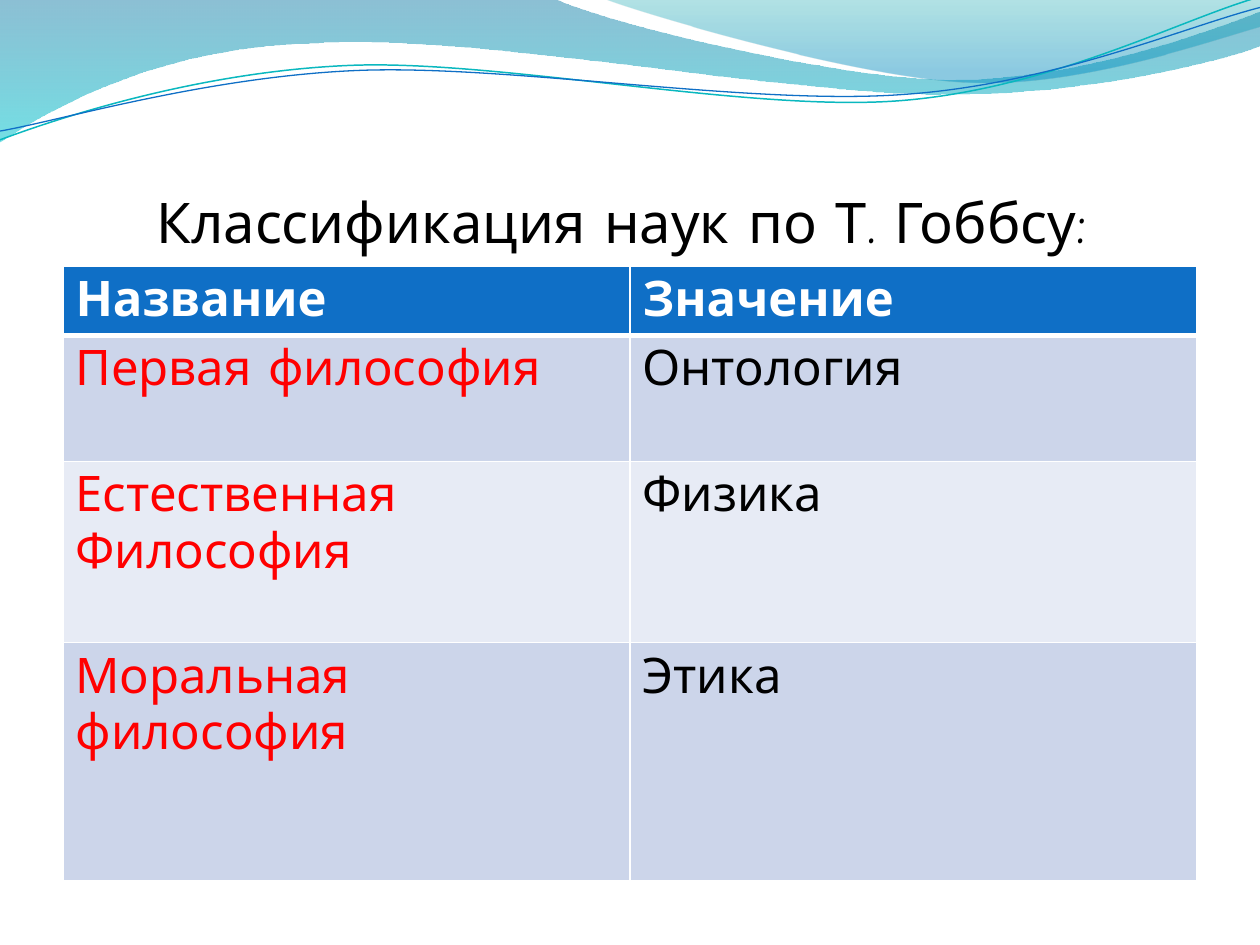
"""Build a slide with a wave header and a table of Hobbes's classification of sciences."""
import math
from lxml import etree
from pptx import Presentation
from pptx import util as u
from pptx.dml.color import RGBColor
from pptx.enum import text
from pptx.oxml import ns

COLORS = {
    "white": "FFFFFF", "black": "000000", "red": "FF0000", "header": "0F6FC6",
    "band_dark": "CCD5EA", "band_light": "E7EBF5", "teal_line": "0AB8BF",
    "deep_blue": "0074A1", "cyan": "00C6CF", "teal": "00A1A9", "blue": "008BBF",
}
FONT = "Comic Neue"


def add_wave(slide, start, segments, closed):
    points = [start]
    for segment in segments:
        points += zip(segment[::2], segment[1::2])
    lengths = [(u.Pt(x), u.Pt(y)) for x, y in points]
    builder = slide.shapes.build_freeform(*lengths[0])
    builder.add_line_segments(lengths[1:], close=closed)
    shape = builder.convert_to_shape()
    shape.shadow.inherit = False
    line_steps = iter(list(shape.element.iter(ns.qn("a:lnTo"))))
    for segment in segments:
        first = next(line_steps)
        if len(segment) == 6:
            curve = etree.Element(ns.qn("a:cubicBezTo"))
            first.addprevious(curve)
            for step in (first, next(line_steps), next(line_steps)):
                curve.append(step[0])
                step.getparent().remove(step)
    return shape


def add_run(paragraph, words, size, color, bold=False):
    run = paragraph.add_run()
    run.text = words
    run.font.name = FONT
    run.font.size = u.Pt(size)
    run.font.bold = bold
    run.font.color.rgb = RGBColor.from_string(COLORS[color])


presentation = Presentation()
presentation.slide_width, presentation.slide_height = u.Pt(720), u.Pt(540)
slide = presentation.slides.add_slide(presentation.slide_layouts[5])

bands = [
    ((0, 0),
     [(316.8, -0.7), (342.7, 12.2, 478, 45.4, 545.8, 45.4), (614.2, 45.4, 689.8, 18.7, 720, 6.5),
      (720.7, 25.9), (707.8, 31.7, 626.4, 54.7, 537.1, 54), (447.8, 54, 275, 20.2, 185, 24.5),
      (92.9, 25.9, 33.1, 59.8, -0.7, 81.4)],
     [(0, "deep_blue", 45), (1, "cyan", 55)]),
    ((344.9, -0.7),
     [(366.5, 7.9, 491, 44.6, 553.7, 46.8), (616.3, 49.7, 691.9, 23, 720, 15.1), (720, 0)],
     [(0, "teal", 30), (0.8, "blue", 45)]),
]
for start, segments, stops in bands:
    band = add_wave(slide, start, segments, True)
    band.line.fill.background()
    band.fill.gradient()
    band.fill.gradient_angle = 270
    for stop, (position, color, opacity) in zip(band.fill.gradient_stops, stops):
        stop.position = position
        stop.color.rgb = RGBColor.from_string(COLORS[color])
    for element, (position, color, opacity) in zip(band.element.iter(ns.qn("a:srgbClr")), stops):
        etree.SubElement(element, ns.qn("a:alpha"), val=str(opacity * 1000))

tilt = 2.7
cosine, sine = math.cos(math.radians(tilt)), math.sin(math.radians(tilt))
strands = [
    ((359.3, 41.4), (0, 79.9),
     [(34.6, 67, 113.8, 41, 199.4, 37.4), (284.4, 33.8, 427, 64.1, 513.4, 57.6),
      (599.8, 51.1, 675.4, 10.8, 718.6, -1.4)], "teal_line", 0.85),
    ((359.6, 42.5), (0, 74.9),
     [(33.8, 69.1, 118.1, 43.9, 203.8, 40.3), (290.2, 36.7, 429.8, 60.5, 516.2, 54),
      (601.9, 48.2, 677.5, 15.1, 720, 4.3)], "header", 0.75),
]
for (center_x, center_y), start, segments, color, width in strands:
    level = []
    for segment in [start, *segments]:
        turned = []
        for x, y in zip(segment[::2], segment[1::2]):
            across, down = x - center_x, y - center_y
            turned += [center_x + across * cosine - down * sine, center_y + across * sine + down * cosine]
        level.append(turned)
    strand = add_wave(slide, level[0], level[1:], False)
    strand.rotation = -tilt
    strand.fill.background()
    strand.line.color.rgb = RGBColor.from_string(COLORS[color])
    strand.line.width = u.Pt(width)

title = slide.shapes.title
title.element.getparent().append(title.element)
title.left, title.top, title.width, title.height = u.Pt(36), u.Pt(55.4), u.Pt(648), u.Pt(90)
frame = title.text_frame
frame.word_wrap = True
frame.auto_size = text.MSO_AUTO_SIZE.NONE
frame.vertical_anchor = text.MSO_ANCHOR.BOTTOM
frame.margin_left = frame.margin_right = frame.margin_bottom = 0
frame.margin_top = u.Pt(3.6)
paragraph = frame.paragraphs[0]
paragraph.alignment = text.PP_ALIGN.LEFT
paragraph._p.get_or_add_pPr().set("marL", str(u.Pt(53.5)))
add_run(paragraph, "Классификация наук по Т. Гоббсу:", 32, "black")

rows = [
    (38.7, "header", ["Название"], ["Значение"]),
    (72, "band_dark", ["Первая философия"], ["Онтология"]),
    (103.5, "band_light", ["Естественная", "Философия"], ["Физика"]),
    (136, "band_dark", ["Моральная философия"], ["Этика"]),
]
table_height = sum(row[0] for row in rows)
table = slide.shapes.add_table(len(rows), 2, u.Pt(36), u.Pt(152.3), u.Pt(648), u.Pt(table_height)).table
for row_index, (height, fill, *entries) in enumerate(rows):
    table.rows[row_index].height = u.Pt(height)
    is_header = row_index == 0
    for column_index, lines in enumerate(entries):
        cell = table.cell(row_index, column_index)
        cell.fill.solid()
        cell.fill.fore_color.rgb = RGBColor.from_string(COLORS[fill])
        color = "white" if is_header else ("red", "black")[column_index]
        for line_index, words in enumerate(lines):
            frame = cell.text_frame
            paragraph = frame.add_paragraph() if line_index else frame.paragraphs[0]
            add_run(paragraph, words, 28, color, is_header)
        properties = cell._tc.get_or_add_tcPr()
        for position, side in enumerate("LRTB"):
            thick = (is_header and side == "B") or (row_index == 1 and side == "T")
            border = etree.Element(ns.qn(f"a:ln{side}"), w=str(u.Pt(3 if thick else 1)))
            solid = etree.SubElement(border, ns.qn("a:solidFill"))
            etree.SubElement(solid, ns.qn("a:srgbClr"), val=COLORS["white"])
            properties.insert(position, border)

presentation.save("out.pptx")
